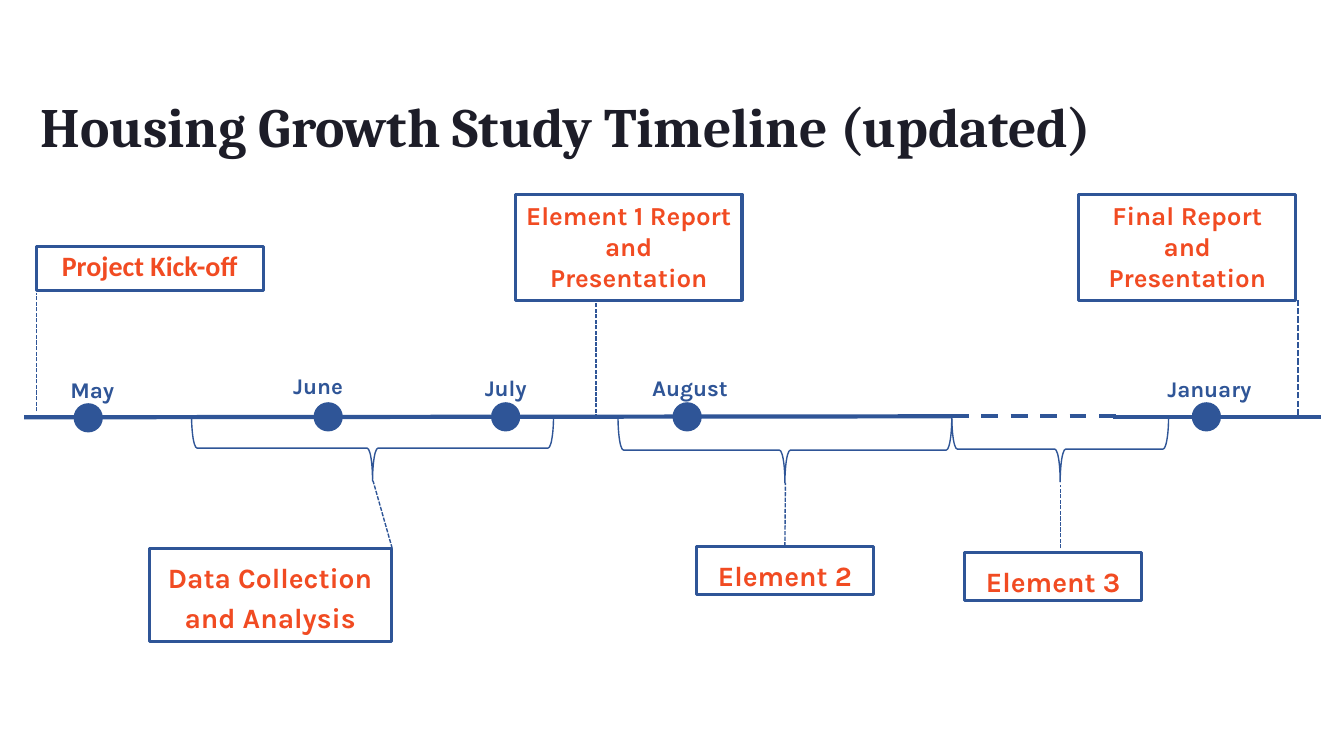
from pptx import Presentation
from pptx.dml.color import RGBColor
from pptx.enum.dml import MSO_LINE_DASH_STYLE as DASH
from pptx.enum.shapes import MSO_CONNECTOR, MSO_SHAPE
from pptx.enum.text import MSO_ANCHOR, PP_ALIGN
from pptx.oxml.ns import qn
from pptx.util import Inches, Pt
from lxml import etree

BLUE, ORANGE, DARK = "2F5597", "F14B22", "1D1D28"


def color(value):
    return RGBColor.from_string(value)


def write(shape, text, font, size, text_color, spacing, align=PP_ALIGN.LEFT, anchor=MSO_ANCHOR.TOP):
    frame = shape.text_frame
    frame.word_wrap = True
    frame.vertical_anchor = anchor
    paragraph = frame.paragraphs[0]
    paragraph.alignment = align
    paragraph.line_spacing = spacing
    run = paragraph.add_run()
    run.text = text
    run.font.name = font
    run.font.size = Pt(size)
    run.font.bold = True
    run.font.color.rgb = color(text_color)


presentation = Presentation()
presentation.slide_width = Inches(13.33)
presentation.slide_height = Inches(7.5)
slide = presentation.slides.add_slide(presentation.slide_layouts[6])
shapes = slide.shapes

# Title
title = shapes.add_textbox(Inches(0.3), Inches(0.72), Inches(12.74), Inches(0.91))
write(title, "Housing Growth Study Timeline (updated)", "Cambria", 39.6, DARK, 0.9,
      anchor=MSO_ANCHOR.BOTTOM)

# Framed milestones and phases
frames = {}
for text, left, top, width, height, font, size, spacing in [
    ("Project Kick-off", 0.36, 2.45, 2.25, 0.43, "Calibri", 20, 0.9),
    ("Element 1 Report and Presentation", 5.11, 1.93, 2.25, 1.05, "Karla", 18.5, 1.0),
    ("Final Report and Presentation", 10.7, 1.93, 2.15, 1.05, "Karla", 18.5, 1.0),
    ("Data Collection and Analysis", 1.48, 5.44, 2.4, 0.92, "Karla", 20, 1.2),
    ("Element 2", 6.91, 5.42, 1.75, 0.48, "Karla", 20, 1.2),
    ("Element 3", 9.57, 5.48, 1.75, 0.48, "Karla", 20, 1.2),
]:
    frame_box = shapes.add_shape(MSO_SHAPE.RECTANGLE, Inches(left), Inches(top),
                                 Inches(width), Inches(height))
    frame_box.shadow.inherit = False
    frame_box.fill.background()
    frame_box.line.color.rgb = color(BLUE)
    frame_box.line.width = Pt(2.25)
    write(frame_box, text, font, size, ORANGE, spacing, PP_ALIGN.CENTER)
    frames[text] = frame_box

# Time axis, then dashed leaders from the frames
for x1, y1, x2, y2, weight, dash, joined in [
    (0.24, 4.14, 9.44, 4.13, 3, None, None),
    (9.44, 4.13, 11.13, 4.13, 3, DASH.DASH, None),
    (11.04, 4.14, 13.1, 4.14, 3, None, None),
    (0.36, 4.08, 0.36, 2.91, 1, DASH.SQUARE_DOT, None),
    (5.91, 4.15, 5.91, 2.97, 1, DASH.SQUARE_DOT, None),
    (12.87, 4.12, 12.87, 2.98, 1.5, DASH.SQUARE_DOT, None),
    (3.89, 5.44, 3.7, 4.77, 1, DASH.SQUARE_DOT, None),
    (7.79, 5.42, 7.79, 4.79, 1, DASH.SQUARE_DOT, "Element 2"),
    (10.52, 5.44, 10.52, 4.81, 1, DASH.SQUARE_DOT, None),
]:
    connector = shapes.add_connector(MSO_CONNECTOR.STRAIGHT, Inches(x1), Inches(y1),
                                     Inches(x2), Inches(y2))
    connector.line.color.rgb = color(BLUE)
    connector.line.width = Pt(weight)
    if dash:
        connector.line.dash_style = dash
    if joined:
        connector.begin_connect(frames[joined], 0)
    etree.SubElement(connector._element.spPr, qn("a:effectLst"))

# Months: dot on the axis and label above it
for month, dot_left, dot_top, label_left, label_top in [
    ("May", 0.73, 4.0, 0.6, 3.63),
    ("June", 3.11, 3.99, 2.81, 3.59),
    ("July", 4.87, 3.99, 4.71, 3.61),
    ("August", 6.67, 3.99, 6.37, 3.61),
    ("January", 11.82, 3.99, 11.48, 3.62),
]:
    dot = shapes.add_shape(MSO_SHAPE.OVAL, Inches(dot_left), Inches(dot_top),
                           Inches(0.29), Inches(0.29))
    dot.shadow.inherit = False
    dot.fill.solid()
    dot.fill.fore_color.rgb = color(BLUE)
    dot.line.fill.background()
    label = shapes.add_textbox(Inches(label_left), Inches(label_top), Inches(2.25), Inches(0.65))
    write(label, month, "Karla", 16, BLUE, 1.2)

# Braces under the axis, turned to point down
for left, top, span in [(3.37, 2.65, 3.59), (7.46, 2.81, 3.31), (10.19, 3.38, 2.15)]:
    brace = shapes.add_shape(MSO_SHAPE.LEFT_BRACE, Inches(left), Inches(top),
                             Inches(0.65), Inches(span))
    brace.rotation = 270
    brace.shadow.inherit = False
    brace.fill.background()
    brace.line.color.rgb = color(BLUE)
    brace.line.width = Pt(1)

presentation.save("out.pptx")
